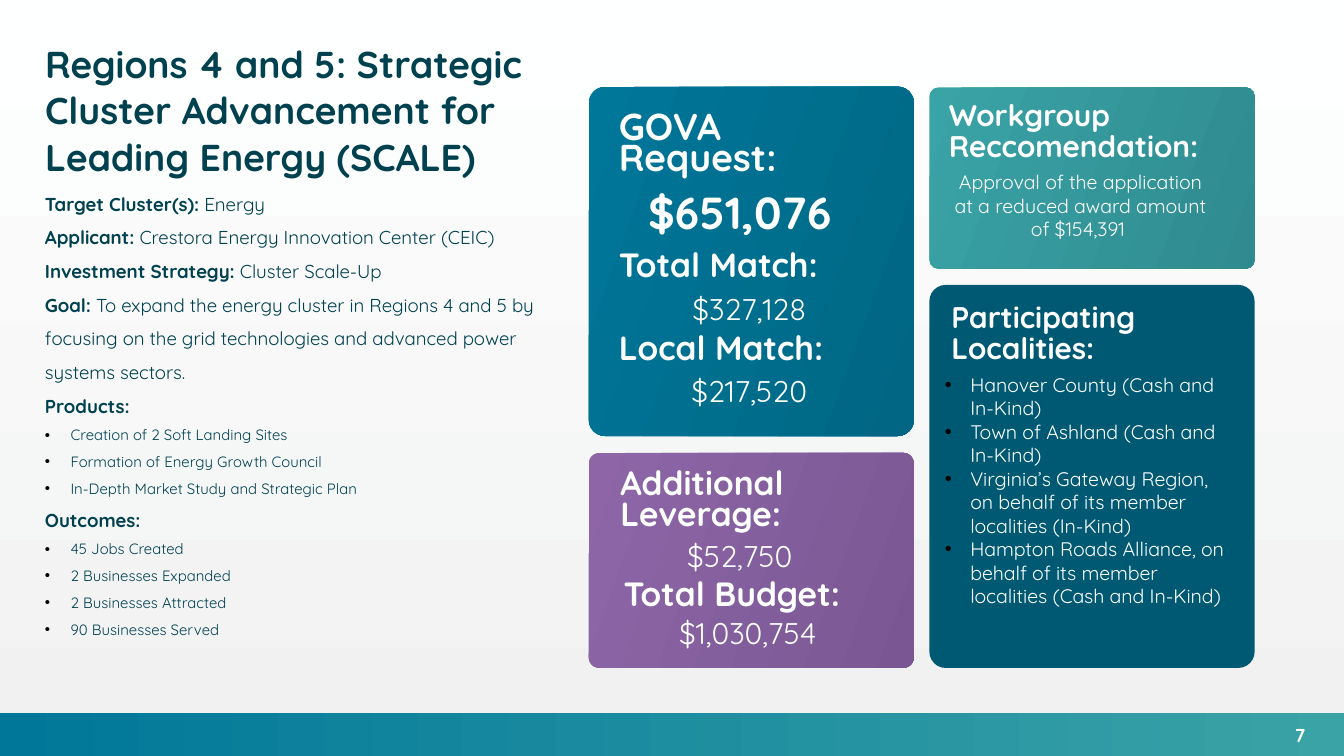
"""Build the SCALE grant summary slide."""
from dataclasses import dataclass
from typing import NamedTuple

from lxml.etree import SubElement
from pptx import Presentation
from pptx.dml.color import RGBColor as Color
from pptx.dml.fill import FillFormat
from pptx.enum.shapes import MSO_SHAPE as Shape
from pptx.enum.text import MSO_AUTO_SIZE as AutoSize, PP_ALIGN as Align
from pptx.oxml.ns import qn
from pptx.slide import Slide
from pptx.util import Emu, Pt

PX = 4572
FONT = "Quicksand"
WHITE = Color(0xFE, 0xFF, 0xFF)
PALE_GREY = Color(0xF1, 0xF1, 0xF1)
BLACK = Color(0x00, 0x00, 0x00)
INK = Color(0x00, 0x41, 0x50)
NAVY = Color(0x00, 0x59, 0x73)
BLUE = Color(0x00, 0x77, 0x99)
DEEP_BLUE = Color(0x00, 0x66, 0x84)
TEAL = Color(0x3A, 0xA3, 0xA6)
DEEP_TEAL = Color(0x2F, 0x8B, 0x8F)
PURPLE = Color(0x8E, 0x66, 0xA8)
DEEP_PURPLE = Color(0x7A, 0x57, 0x92)

SLIDE_WIDTH, SLIDE_HEIGHT, FOOTER_TOP = 2000, 1125, 1061
LEFT_COLUMN, RIGHT_COLUMN, CARD_WIDTH = 876, 1383, 484
BULLET_INDENT = 38
HEADING_LEADING = Pt(16.6)


class Box(NamedTuple):
    left: int
    top: int
    width: int
    height: int


class Card(NamedTuple):
    box: Box
    colors: tuple[Color, ...]


class Words(NamedTuple):
    text: str
    size: float
    bold: bool = False
    color: Color = WHITE


@dataclass(frozen=True)
class Line:
    runs: tuple[Words, ...]
    align: Align | None = None
    spacing: float | Pt | None = None
    bullet: bool = False


@dataclass(frozen=True)
class TextBlock:
    box: Box
    lines: tuple[Line, ...]
    inset_x: int = 0
    inset_y: int = 0


def heading(text: str, size: float, box: Box) -> TextBlock:
    return TextBlock(box, (Line((Words(text, size, True),), spacing=HEADING_LEADING),))


def centred(text: str, size: float, box: Box, bold: bool = False) -> TextBlock:
    return TextBlock(box, (Line((Words(text, size, bold),), Align.CENTER),))


def fact(label: str, value: str = "") -> Line:
    runs = [Words(label, 10, True, INK)]
    if value:
        runs.append(Words(value, 10, False, INK))
    return Line(tuple(runs), spacing=1.5)


def detail(text: str) -> Line:
    return Line((Words(text, 8, False, INK),), spacing=1.5, bullet=True)


def locality(text: str) -> Line:
    return Line((Words(text, 10.5),), bullet=True)


CARDS = (
    Card(Box(RIGHT_COLUMN, 130, CARD_WIDTH, 270), (TEAL, DEEP_TEAL)),
    Card(Box(LEFT_COLUMN, 129, CARD_WIDTH, 520), (BLUE, DEEP_BLUE)),
    Card(Box(RIGHT_COLUMN, 424, CARD_WIDTH, 570), (NAVY,)),
    Card(Box(LEFT_COLUMN, 674, CARD_WIDTH, 320), (PURPLE, DEEP_PURPLE)),
)

TITLE = Words("Regions 4 and 5: Strategic Cluster Advancement for Leading Energy (SCALE)", 20, True, INK)
GOAL = (
    "To expand the energy cluster in Regions 4 and 5 by focusing on "
    "the grid technologies and advanced power systems sectors."
)
SUMMARY = (
    fact("Target Cluster(s): ", "Energy"),
    fact("Applicant: ", "Crestora Energy Innovation Center (CEIC)"),
    fact("Investment Strategy: ", "Cluster Scale-Up"),
    fact("Goal: ", GOAL),
    fact("Products:"),
    detail("Creation of 2 Soft Landing Sites"),
    detail("Formation of Energy Growth Council"),
    detail("In-Depth Market Study and Strategic Plan"),
    fact("Outcomes:"),
    detail("45 Jobs Created"),
    detail("2 Businesses Expanded"),
    detail("2 Businesses Attracted"),
    detail("90 Businesses Served"),
)
LOCALITIES = (
    locality("Hanover County (Cash and In-Kind)"),
    locality("Town of Ashland (Cash and In-Kind)"),
    locality("Virginia’s Gateway Region, on behalf of its member localities (In-Kind)"),
    locality("Hampton Roads Alliance, on behalf of its member localities (Cash and In-Kind)"),
)
PAGE_NUMBER = Line((Words("7", 10, True),), Align.CENTER)
APPROVAL = "Approval of the application at a reduced award amount of $154,391 "

TEXT_BLOCKS = (
    TextBlock(Box(1892, 1068, 86, 54), (PAGE_NUMBER,), 20, 10),
    TextBlock(Box(67, 59, 742, 210), (Line((TITLE,), spacing=Pt(24.8)),)),
    TextBlock(Box(67, 270, 752, 692), SUMMARY),
    heading("GOVA Request:", 20, Box(921, 174, 304, 96)),
    centred("$651,076", 24, Box(909, 275, 384, 80), True),
    heading("Total Match:", 18, Box(921, 377, 394, 48)),
    centred("$327,128", 16, Box(923, 432, 384, 54)),
    heading("Local Match:", 18, Box(921, 500, 394, 48)),
    centred("$217,520", 16, Box(923, 555, 384, 54)),
    heading("Additional Leverage:", 18, Box(923, 702, 304, 96)),
    centred("$52,750", 16, Box(909, 800, 384, 54)),
    heading("Total Budget:", 18, Box(928, 867, 394, 48)),
    centred("$1,030,754", 16, Box(921, 915, 384, 54)),
    heading("Workgroup Reccomendation:", 16, Box(1412, 151, 426, 96)),
    centred(APPROVAL, 10.5, Box(1416, 253, 384, 106)),
    heading("Participating Localities:", 16, Box(1416, 452, 394, 96)),
    TextBlock(Box(1406, 555, 432, 354), LOCALITIES),
)


def px(length: int) -> Emu:
    return Emu(length * PX)


def paint(fill: FillFormat, colors: tuple[Color, ...], angle: int) -> None:
    if len(colors) == 1:
        fill.solid()
        fill.fore_color.rgb = colors[0]
        return
    fill.gradient()
    fill.gradient_angle = -angle % 360
    for stop, color in zip(fill.gradient_stops, colors):
        stop.color.rgb = color


def draw_panel(slide: Slide, kind: Shape, card: Card, angle: int) -> None:
    shape = slide.shapes.add_shape(kind, *map(px, card.box))
    shape.shadow.inherit = False
    shape.line.fill.background()
    paint(shape.fill, card.colors, angle)
    if kind == Shape.ROUNDED_RECTANGLE:
        shape.adjustments[0] = 0.05


def add_bullet(paragraph) -> None:
    properties = paragraph._p.get_or_add_pPr()
    properties.set("marL", str(px(BULLET_INDENT)))
    properties.set("indent", str(px(-BULLET_INDENT)))
    color = SubElement(properties, qn("a:buClr"))
    SubElement(color, qn("a:srgbClr"), val=str(BLACK))
    SubElement(properties, qn("a:buFont"), typeface="Arial")
    SubElement(properties, qn("a:buChar"), char="•")


def draw_text(slide: Slide, block: TextBlock) -> None:
    frame = slide.shapes.add_textbox(*map(px, block.box)).text_frame
    frame.word_wrap = True
    frame.auto_size = AutoSize.SHAPE_TO_FIT_TEXT
    frame.margin_left = frame.margin_right = px(block.inset_x)
    frame.margin_top = frame.margin_bottom = px(block.inset_y)
    for index, line in enumerate(block.lines):
        paragraph = frame.add_paragraph() if index else frame.paragraphs[0]
        if line.bullet:
            add_bullet(paragraph)
        paragraph.alignment = line.align
        paragraph.line_spacing = line.spacing
        for words in line.runs:
            run = paragraph.add_run()
            run.text = words.text
            run.font.name = FONT
            run.font.size = Pt(words.size)
            run.font.bold = words.bold
            run.font.color.rgb = words.color


def main() -> None:
    presentation = Presentation()
    presentation.slide_width, presentation.slide_height = px(SLIDE_WIDTH), px(SLIDE_HEIGHT)
    slide = presentation.slides.add_slide(presentation.slide_layouts[6])
    paint(slide.background.fill, (WHITE, PALE_GREY), 90)
    footer = Card(Box(0, FOOTER_TOP, SLIDE_WIDTH, SLIDE_HEIGHT - FOOTER_TOP), (BLUE, TEAL))
    draw_panel(slide, Shape.RECTANGLE, footer, 0)
    for card in CARDS:
        draw_panel(slide, Shape.ROUNDED_RECTANGLE, card, 20)
    for block in TEXT_BLOCKS:
        draw_text(slide, block)
    presentation.save("out.pptx")


if __name__ == "__main__":
    main()
